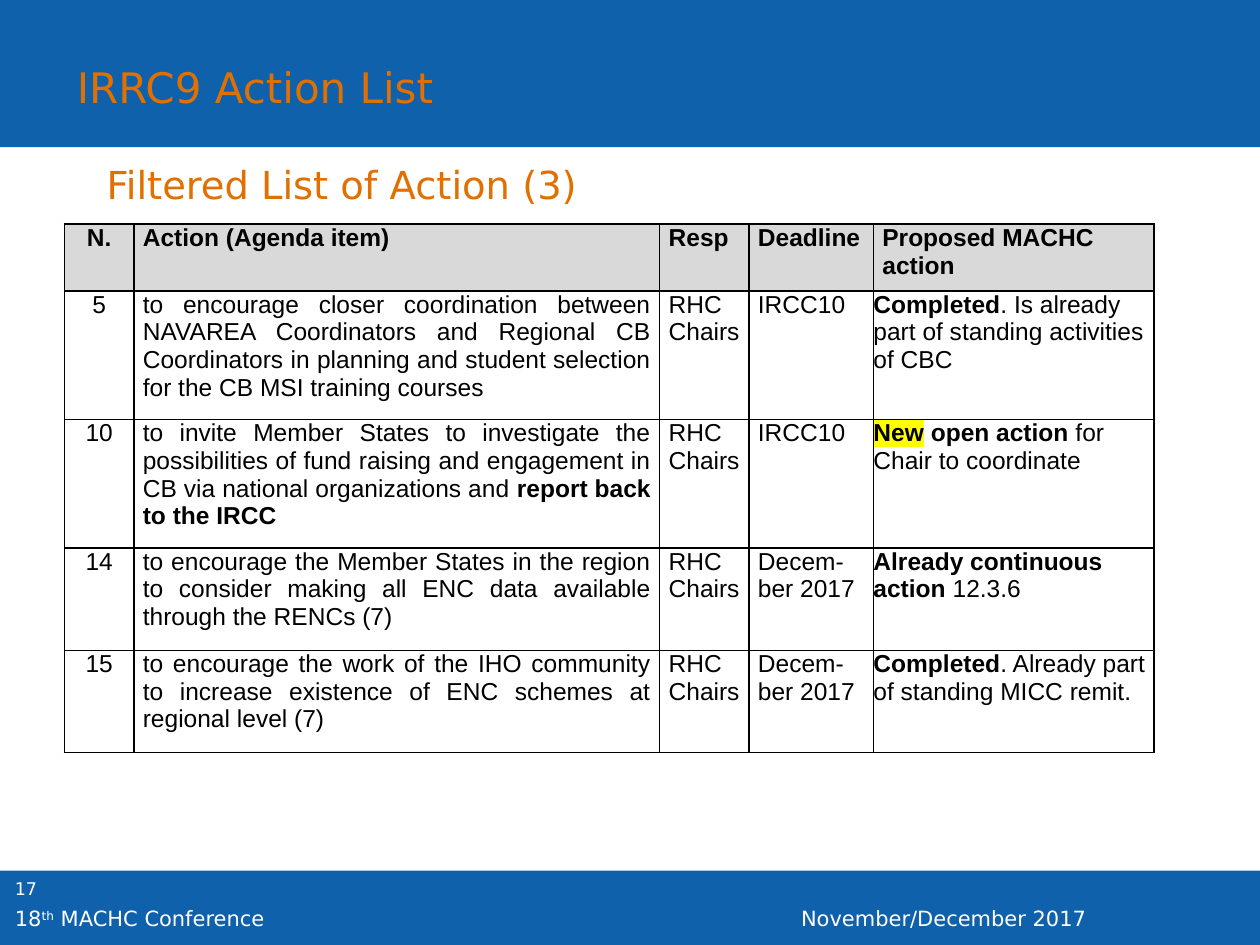
from lxml.etree import SubElement
from pptx import Presentation
from pptx.dml.color import RGBColor
from pptx.enum.shapes import MSO_SHAPE
from pptx.enum.text import PP_ALIGN
from pptx.oxml.ns import qn
from pptx.util import Cm, Pt

BLUE, ORANGE, WHITE, BLACK = "0E61AA", "E17000", "FFFFFF", "000000"
GREY, YELLOW = "D9D9D9", "FFFF00"

WIDTHS = [1.4, 10.6, 1.8, 2.51, 5.66]
HEIGHTS = [1.35, 2.59, 2.59, 2.06, 2.06]
ALIGNS = [PP_ALIGN.CENTER, PP_ALIGN.JUSTIFY] + [PP_ALIGN.LEFT] * 3
INDENTS = [0.25, 0.18, 0.18, 0.18, 0]

# Text between asterisks is bold, and between underscores also highlighted.
ROWS = [
    ["*N.*", "*Action (Agenda item)*", "*Resp*", "*Deadline*",
     "*Proposed MACHC action*"],
    ["5", "to encourage closer coordination between NAVAREA Coordinators and "
     "Regional CB Coordinators in planning and student selection for the CB "
     "MSI training courses", "RHC Chairs", "IRCC10",
     "*Completed*. Is already part of standing activities of CBC"],
    ["10", "to invite Member States to investigate the possibilities of fund "
     "raising and engagement in CB via national organizations and "
     "*report back to the IRCC*", "RHC Chairs", "IRCC10",
     "*_New_* *open action* for Chair to coordinate"],
    ["14", "to encourage the Member States in the region to consider making "
     "all ENC data available through the RENCs (7)", "RHC Chairs",
     "Decem-ber 2017", "*Already continuous action* 12.3.6"],
    ["15", "to encourage the work of the IHO community to increase existence "
     "of ENC schemes at regional level (7)", "RHC Chairs", "Decem-ber 2017",
     "*Completed*. Already part of standing MICC remit."],
]


def color(code):
    return RGBColor.from_string(code)


class Deck:
    """Holds the fonts and the current slide."""
    head, body = "DejaVu Sans", "Arial"

    def __init__(self):
        self.prs = Presentation()
        self.prs.slide_width, self.prs.slide_height = Cm(25.4), Cm(19.05)
        self.slide = self.prs.slides.add_slide(self.prs.slide_layouts[6])

    def font(self, para, name, size, code):
        para.font.name, para.font.size = name, Pt(size)
        para.font.color.rgb = color(code)

    def band(self, top, height):
        shape = self.slide.shapes.add_shape(
            MSO_SHAPE.RECTANGLE, 0, Cm(top), Cm(25.4), Cm(height))
        shape.shadow.inherit = False
        shape.fill.solid()
        shape.fill.fore_color.rgb = color(BLUE)
        shape.line.fill.background()

    def text(self, words, left, top, width, height, size, code, wrap=True):
        """Add a text box; a caret on each side marks a superscript."""
        box = self.slide.shapes.add_textbox(
            Cm(left), Cm(top), Cm(width), Cm(height))
        box.text_frame.word_wrap = wrap
        para = box.text_frame.paragraphs[0]
        for i, part in enumerate(words.split("^")):
            run = para.add_run()
            run.text = part
            if i % 2:
                run.font._element.set("baseline", "30000")
        self.font(para, self.head, size, code)

    def table(self, left, top, rows):
        grid = self.slide.shapes.add_table(
            len(rows), len(WIDTHS), Cm(left), Cm(top),
            Cm(sum(WIDTHS)), Cm(sum(HEIGHTS))).table
        for col, width in zip(grid.columns, WIDTHS):
            col.width = Cm(width)
        for row, height in zip(grid.rows, HEIGHTS):
            row.height = Cm(height)
        for r, row in enumerate(rows):
            for c, words in enumerate(row):
                self.cell(grid.cell(r, c), words, r == 0, c)

    def cell(self, cell, words, top, col):
        cell.margin_left = cell.margin_right = 0
        cell.margin_top = cell.margin_bottom = 0
        self.border(cell)
        if top:
            cell.fill.solid()
            cell.fill.fore_color.rgb = color(GREY)
        else:
            cell.fill.background()
        para = cell.text_frame.paragraphs[0]
        indent = Cm(0.18 if top and col else INDENTS[col])
        props = para._p.get_or_add_pPr()
        for side in ("marL", "marR"):
            props.set(side, str(indent))
        para.alignment = (PP_ALIGN.LEFT if top and col else ALIGNS[col])
        for i, part in enumerate(words.split("*")):
            if part:
                run = para.add_run()
                run.text = part.strip("_")
                run.font.bold = i % 2 == 1
                if part.startswith("_"):
                    mark = SubElement(run.font._element, qn("a:highlight"))
                    SubElement(mark, qn("a:srgbClr"), val=YELLOW)
        self.font(para, self.body, 14, BLACK)

    def border(self, cell):
        props = cell._tc.get_or_add_tcPr()
        for side in "LRTB":
            line = SubElement(props, qn("a:ln" + side), w=str(Pt(1)))
            fill = SubElement(line, qn("a:solidFill"))
            SubElement(fill, qn("a:srgbClr"), val=BLACK)


def main():
    deck = Deck()
    deck.band(17.55, 1.5)
    deck.band(0, 2.97)
    deck.text("17", 0.05, 17.58, 1.98, 1.02, 10, WHITE)
    deck.text("November/December 2017", 15.9, 18.14, 9.5, 0.61, 12, WHITE)
    deck.text("18^th^ MACHC Conference", 0.05, 18.14, 11.13, 0.61, 12, WHITE)
    deck.text("Filtered List of Action (3)", 1.9, 3.12, 10.59, 1.19, 22,
              ORANGE, wrap=False)
    deck.text("IRRC9 Action List", 1.3, 1.12, 8.28, 1.27, 24, ORANGE,
              wrap=False)
    deck.table(1.3, 4.52, ROWS)
    deck.prs.save("out.pptx")


if __name__ == "__main__":
    main()
